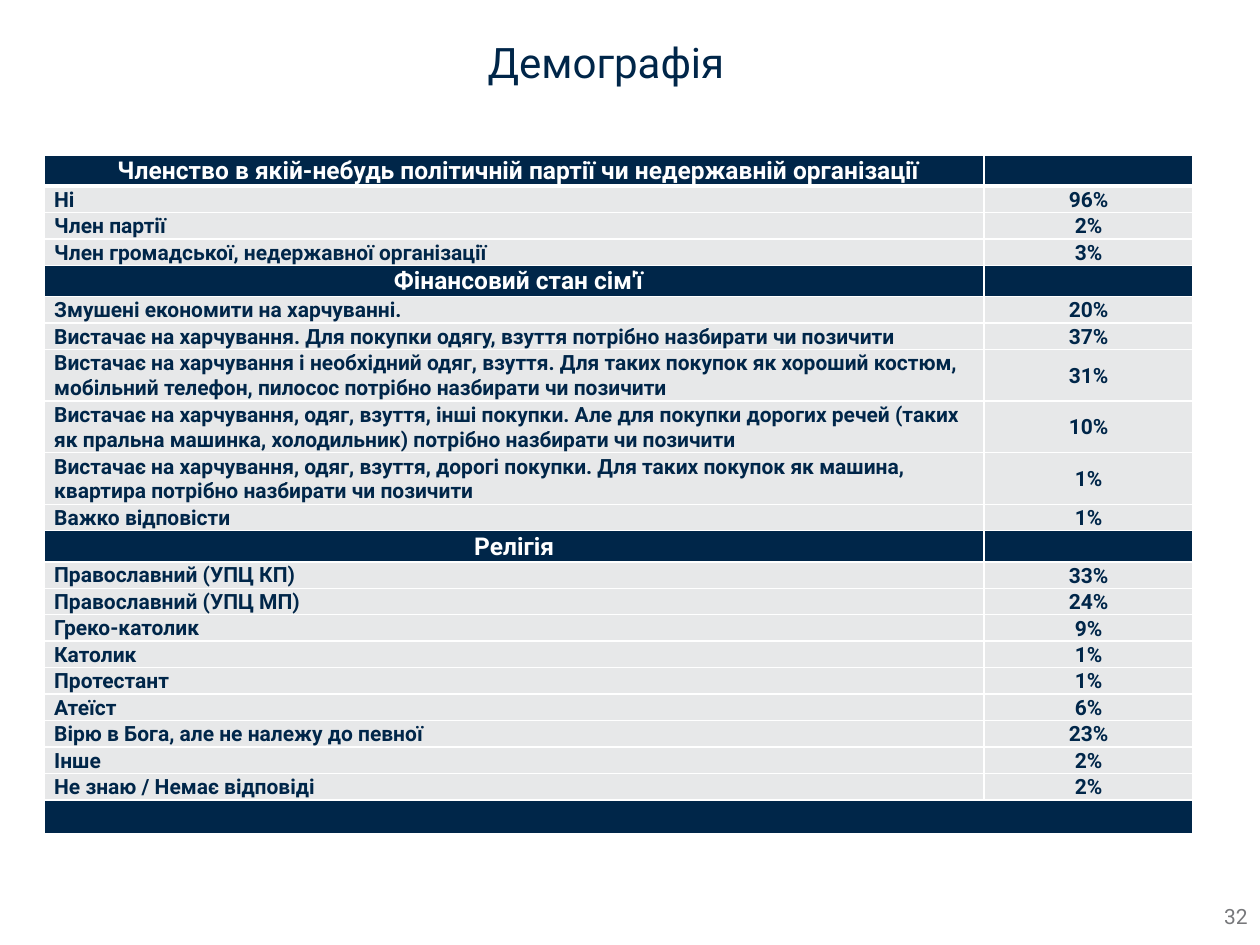
from lxml import etree
from pptx import Presentation
from pptx.dml.color import RGBColor
from pptx.enum.text import MSO_ANCHOR as ANCHOR, PP_ALIGN as ALIGN
from pptx.oxml.ns import qn
from pptx.util import Inches, Pt

NAVY = RGBColor(0x00, 0x26, 0x49)
PALE = RGBColor(0xE7, 0xE8, 0xE9)
GREY = RGBColor(0x77, 0x78, 0x7B)
WHITE = RGBColor(0xFF, 0xFF, 0xFF)
FONT = "Roboto"

# Heading, its alignment inset, the anchor of its values, and its answers
SECTIONS = [
    ("Членство в якій-небудь полiтичній партiї чи недержавній органiзацiї", 0.08, ANCHOR.MIDDLE, [
        ("Ні", "96%"),
        ("Член партії", "2%"),
        ("Член громадської, недержавної організації", "3%"),
    ]),
    ("Фiнансовий стан сiм'ї", 0.08, ANCHOR.MIDDLE, [
        ("Змушенi економити на харчуваннi.", "20%"),
        ("Вистачає на харчування. Для покупки одягу, взуття потрібно назбирати чи позичити", "37%"),
        ("Вистачає на харчування і необхідний одяг, взуття. Для таких покупок як хороший костюм, "
         "мобільний телефон, пилосос потрібно назбирати чи позичити", "31%"),
        ("Вистачає на харчування, одяг, взуття, інші покупки. Але для покупки дорогих речей (таких "
         "як пральна машинка, холодильник) потрібно назбирати чи позичити", "10%"),
        ("Вистачає на харчування, одяг, взуття, дорогі покупки. Для таких покупок як машина, "
         "квартира потрібно назбирати чи позичити", "1%"),
        ("Важко вiдповiсти", "1%"),
    ]),
    ("Релігія", 0.01, ANCHOR.BOTTOM, [
        ("Православний (УПЦ КП)", "33%"),
        ("Православний (УПЦ МП)", "24%"),
        ("Греко-католик", "9%"),
        ("Католик", "1%"),
        ("Протестант", "1%"),
        ("Атеїст", "6%"),
        ("Вiрю в Бога, але не належу до певної", "23%"),
        ("Iнше", "2%"),
        ("Не знаю / Немає вiдповiдi", "2%"),
    ]),
]
COL_WIDTHS = [7.46, 1.66]
HEADING_H, LINE_H, TWO_LINES_H, CLOSING_H = 0.24, 0.21, 0.41, 0.27
TWO_LINES_FROM = 90  # characters


def write(tf, text, size=12, color=NAVY, bold=False, align=ALIGN.LEFT):
    p = tf.paragraphs[0]
    p.alignment = align
    if not text:
        # The end mark keeps an empty cell from stretching its row
        etree.SubElement(p._p, qn("a:endParaRPr"), sz=str(size * 100))
        return
    r = p.add_run()
    r.text = text
    r.font.name = FONT
    r.font.size = Pt(size)
    r.font.bold = bold
    r.font.color.rgb = color


def style_cell(cell, fill, inset, anchor, top=1, bottom=1):
    """Set fill, margins, anchor and white borders; top and bottom are points."""
    cell.fill.solid()
    cell.fill.fore_color.rgb = fill
    cell.margin_left = Inches(inset)
    cell.margin_top = cell.margin_right = Inches(0.01)
    cell.margin_bottom = 0
    cell.vertical_anchor = anchor
    tc_pr = cell._tc.get_or_add_tcPr()
    sides = {"a:lnL": 1, "a:lnR": 1, "a:lnT": top, "a:lnB": bottom}
    for i, (tag, width) in enumerate(sides.items()):
        ln = etree.Element(qn(tag), w=str(Pt(width)))
        solid = etree.SubElement(ln, qn("a:solidFill"))
        etree.SubElement(solid, qn("a:srgbClr"), val=str(WHITE))
        tc_pr.insert(i, ln)


prs = Presentation()
prs.slide_width, prs.slide_height = Inches(10), Inches(7.5)
s = prs.slides.add_slide(prs.slide_layouts[5])

title = s.shapes.title
title.left, title.top = Inches(1.21), Inches(0.24)
title.width, title.height = Inches(7.2), Inches(0.5)
title.text_frame.vertical_anchor = ANCHOR.MIDDLE
write(title.text_frame, "Демографія", size=24, align=ALIGN.CENTER)

# Each row: label, value, is heading, label inset, value anchor, height
rows = []
for heading, inset, anchor, answers in SECTIONS:
    rows.append((heading, "", True, inset, ANCHOR.MIDDLE, HEADING_H))
    for label, value in answers:
        height = TWO_LINES_H if len(label) > TWO_LINES_FROM else LINE_H
        rows.append((label, value, False, 0.08, anchor, height))
rows.append(("", "", True, 0.08, ANCHOR.MIDDLE, CLOSING_H))

table = s.shapes.add_table(len(rows), 2, Inches(0.35), Inches(1.23), Inches(sum(COL_WIDTHS)),
                           Inches(sum(row[-1] for row in rows))).table
table.first_row = table.horz_banding = False
for col, width in zip(table.columns, COL_WIDTHS):
    col.width = Inches(width)

for i, (label, value, is_heading, inset, anchor, height) in enumerate(rows):
    table.rows[i].height = Inches(height)
    fill, color, size = (NAVY, WHITE, 14) if is_heading else (PALE, NAVY, 12)
    label_align = ALIGN.CENTER if is_heading else ALIGN.LEFT
    rules = {"top": 3 if i == 1 else 1, "bottom": 3 if i == 0 else 1}
    label_cell, value_cell = table.cell(i, 0), table.cell(i, 1)
    style_cell(label_cell, fill, inset, ANCHOR.MIDDLE, **rules)
    style_cell(value_cell, fill, 0.01, anchor, **rules)
    write(label_cell.text_frame, label, size=size, color=color, bold=True, align=label_align)
    write(value_cell.text_frame, value, size=size, color=color, bold=True, align=ALIGN.CENTER)

last = len(rows) - 1
table.cell(last, 0).merge(table.cell(last, 1))

number = s.shapes.add_textbox(Inches(7.75), Inches(7.07), Inches(2.25), Inches(0.4))
number.text_frame.word_wrap = True
number.text_frame.vertical_anchor = ANCHOR.MIDDLE
write(number.text_frame, "32", color=GREY, align=ALIGN.RIGHT)

prs.save("out.pptx")
